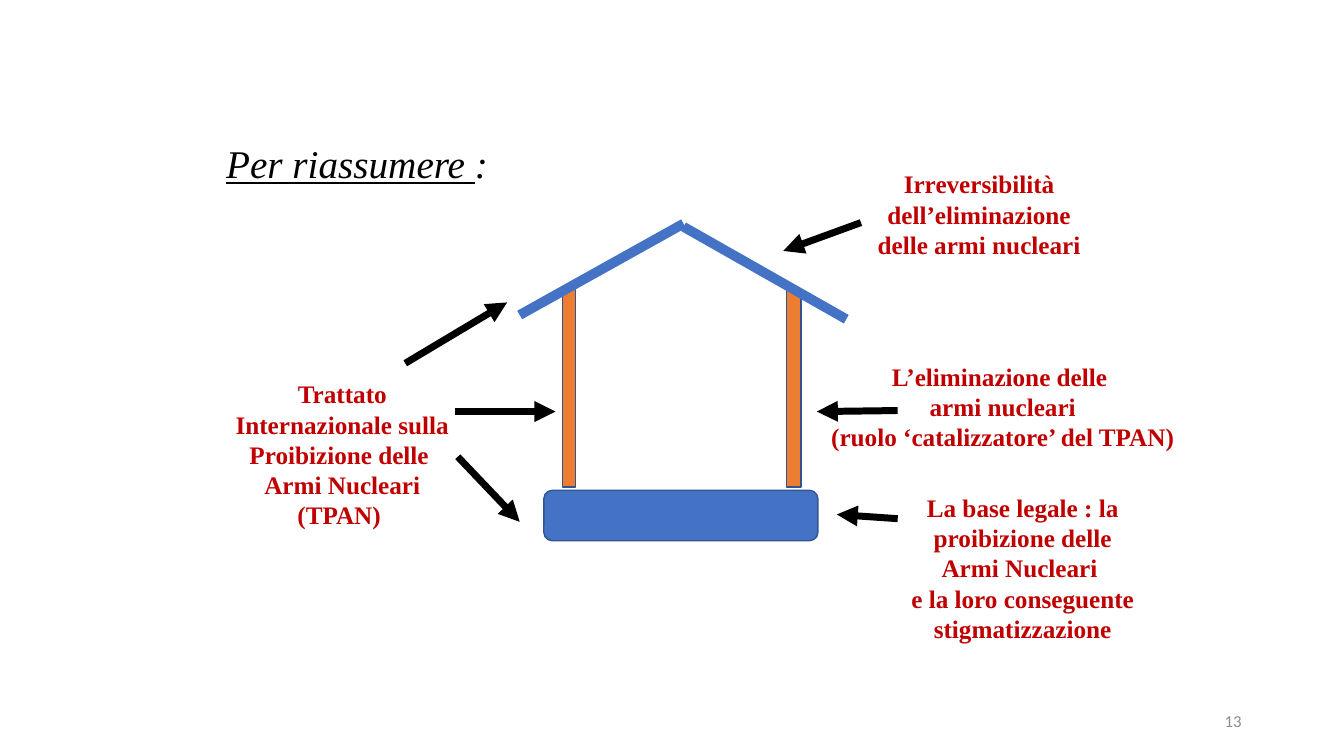
from lxml.etree import SubElement
from pptx import Presentation
from pptx.dml.color import RGBColor
from pptx.enum.shapes import MSO_CONNECTOR, MSO_SHAPE
from pptx.enum.text import MSO_ANCHOR, PP_ALIGN
from pptx.oxml.ns import qn
from pptx.util import Pt

EMU_PER_PX = 9525

BLACK = RGBColor(0x00, 0x00, 0x00)
RED = RGBColor(0xC0, 0x00, 0x00)
BLUE = RGBColor(0x44, 0x72, 0xC4)
ORANGE = RGBColor(0xED, 0x7D, 0x31)
OUTLINE = RGBColor(0x32, 0x54, 0x91)
GRAY = RGBColor(0x8C, 0x8C, 0x8C)

TITLE_FONT = {"name": "Times New Roman", "size": Pt(28), "italic": True}
LABEL_FONT = {"name": "Times New Roman", "size": Pt(18), "bold": True}
NUMBER_FONT = {"name": "Calibri", "size": Pt(12)}

PILLAR_TOP, PILLAR_HEIGHT = 276, 188
PILLARS = [(536, 12), (749, 14)]
ROOF = [(651, 216, 806, 304), (495, 300, 651, 213)]
ARROWS = [
    (436, 435, 495, 497),
    (855, 494, 797, 490),
    (386, 346, 483, 288),
    (820, 212, 746, 239),
    (855, 391, 778, 392),
    (433, 392, 529, 392),
]
LABELS = [
    ((200, 356, 252, 156), True,
     ["Trattato Internazionale sulla Proibizione delle ", "Armi Nucleari", "(TPAN) "]),
    ((853, 464, 242, 156), True,
     ["La base legale : la proibizione delle Armi Nucleari ",
      "e la loro conseguente stigmatizzazione"]),
    ((780, 339, 350, 97), False,
     ["L’eliminazione delle ", "armi nucleari", "(ruolo ‘catalizzatore’ del TPAN)"]),
    ((813, 156, 239, 126), True,
     ["Irreversibilità dell’eliminazione delle armi nucleari"]),
]


def px(*lengths):
    return [length * EMU_PER_PX for length in lengths]


def apply_format(target, values):
    for name, value in values.items():
        setattr(target, name, value)


def add_run(paragraph, text, font, color):
    run = paragraph.add_run()
    run.text = text
    apply_format(run.font, font)
    run.font.color.rgb = color


def add_text_frame(slide, box, frame_format):
    frame = slide.shapes.add_textbox(*px(*box)).text_frame
    apply_format(frame, frame_format)
    return frame


def add_label(slide, box, wrap, lines):
    frame = add_text_frame(slide, box, {"word_wrap": wrap})
    for index, line in enumerate(lines):
        paragraph = frame.add_paragraph() if index else frame.paragraphs[0]
        paragraph.alignment = PP_ALIGN.CENTER
        add_run(paragraph, line, LABEL_FONT, RED)


def add_title(slide):
    paragraph = add_text_frame(slide, (206, 128, 400, 52), {"word_wrap": True}).paragraphs[0]
    add_run(paragraph, "Per riassumere ", {**TITLE_FONT, "underline": True}, BLACK)
    add_run(paragraph, ":", TITLE_FONT, BLACK)


def add_page_number(slide):
    frame_format = {"word_wrap": True, "vertical_anchor": MSO_ANCHOR.MIDDLE}
    paragraph = add_text_frame(slide, (904, 667, 288, 38), frame_format).paragraphs[0]
    paragraph.alignment = PP_ALIGN.RIGHT
    add_run(paragraph, "13", NUMBER_FONT, GRAY)


def add_block(slide, kind, box, color):
    shape = slide.shapes.add_shape(kind, *px(*box))
    shape.shadow.inherit = False
    shape.fill.solid()
    shape.fill.fore_color.rgb = color
    shape.line.color.rgb = OUTLINE
    shape.line.width = Pt(1)


def add_line(slide, ends, color, width, arrow=False):
    connector = slide.shapes.add_connector(MSO_CONNECTOR.STRAIGHT, *px(*ends))
    connector.line.color.rgb = color
    connector.line.width = Pt(width)
    if arrow:
        SubElement(connector.line._get_or_add_ln(), qn("a:tailEnd"), type="triangle")
    SubElement(connector._element.spPr, qn("a:effectLst"))


def main():
    presentation = Presentation()
    width, height = px(1280, 720)
    apply_format(presentation, {"slide_width": width, "slide_height": height})
    slide = presentation.slides.add_slide(presentation.slide_layouts[6])

    add_title(slide)
    add_block(slide, MSO_SHAPE.ROUNDED_RECTANGLE, (518, 467, 261, 48), BLUE)
    for left, pillar_width in PILLARS:
        box = (left, PILLAR_TOP, pillar_width, PILLAR_HEIGHT)
        add_block(slide, MSO_SHAPE.RECTANGLE, box, ORANGE)
    for ends in ROOF:
        add_line(slide, ends, BLUE, 7)
    for box, wrap, lines in LABELS:
        add_label(slide, box, wrap, lines)
    for ends in ARROWS:
        add_line(slide, ends, BLACK, 5, arrow=True)
    add_page_number(slide)

    presentation.save("out.pptx")


if __name__ == "__main__":
    main()
